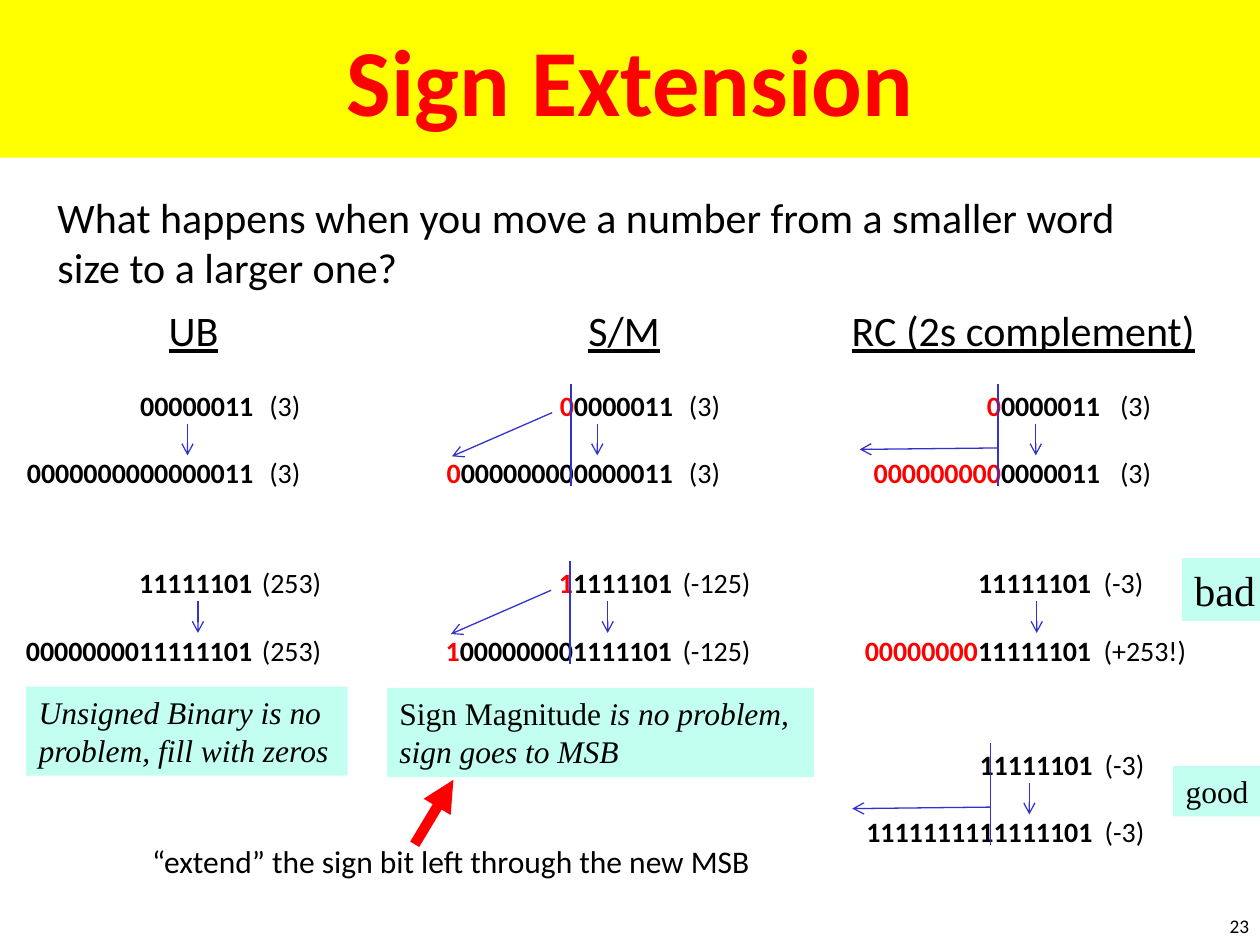
from dataclasses import dataclass

from lxml.etree import SubElement
from pptx import Presentation
from pptx.dml.color import RGBColor as RGB
from pptx.enum.shapes import MSO_CONNECTOR as CONNECTOR, MSO_SHAPE as SHAPE
from pptx.enum.text import MSO_ANCHOR as ANCHOR, MSO_AUTO_SIZE as AUTO_SIZE, PP_ALIGN as ALIGN
from pptx.oxml.ns import qn
from pptx.util import Cm, Pt


@dataclass(frozen=True)
class Theme:
    black = RGB(0, 0, 0)
    red = RGB(0xFF, 0, 0)
    yellow = RGB(0xFF, 0xFF, 0)
    mint = RGB(0xC2, 0xFF, 0xF0)
    blue = RGB(0x33, 0x33, 0xCC)
    title = {"name": "Calibri", "size": Pt(54), "bold": True}
    question = {"name": "Calibri", "size": Pt(24)}
    heading = {"name": "Calibri", "size": Pt(24), "underline": True}
    bits = {"name": "Calibri", "size": Pt(16), "bold": True}
    value = {"name": "Calibri", "size": Pt(16)}
    remark = {"name": "Calibri", "size": Pt(18)}
    number = {"name": "Calibri", "size": Pt(11)}
    note = {"name": "Times New Roman", "size": Pt(18)}
    note_italic = {**note, "italic": True}
    verdict = {"name": "Times New Roman", "size": Pt(24)}
    row_gap = Pt(19.5)
    thin, thick = Pt(0.75), Pt(6)


THEME = Theme()


@dataclass(frozen=True)
class Conversion:
    """One widening from 8 to 16 bits, placed relative to its column."""
    dx: float
    dy: float
    bits: tuple
    red: tuple
    values: tuple
    value_dx: float
    value_width: float
    down_dx: float
    spread: str = ""


# Start and end of the arrow that carries the sign bit to the left
SPREADS = {
    "move": ((2.47, 0.62), (0.45, 1.5)),
    "fill": ((2.85, 1.33), (0.06, 1.36)),
}


def write(paragraph, text, style, color=THEME.black):
    run = paragraph.add_run()
    run.text = text
    for attribute, setting in style.items():
        setattr(run.font, attribute, setting)
    run.font.color.rgb = color


def text_box(slide, box, wrap=False):
    frame = slide.shapes.add_textbox(*map(Cm, box)).text_frame
    frame.word_wrap = wrap
    return frame


def label(slide, box, text, style, wrap=False):
    write(text_box(slide, box, wrap).paragraphs[0], text, style)


def line(slide, start, end, color=THEME.blue, width=THEME.thin, head=None):
    connector = slide.shapes.add_connector(CONNECTOR.STRAIGHT, *map(Cm, start + end))
    connector.line.color.rgb = color
    connector.line.width = width
    if head:
        SubElement(connector.line._get_or_add_ln(), qn("a:tailEnd"), type=head)
    SubElement(connector._element.spPr, qn("a:effectLst"))


def note(slide, box, parts, wrap=True):
    """Mint box with a list of (text, style) parts."""
    panel = slide.shapes.add_shape(SHAPE.RECTANGLE, *map(Cm, box))
    panel.shadow.inherit = False
    panel.fill.solid()
    panel.fill.fore_color.rgb = THEME.mint
    panel.line.fill.background()
    frame = panel.text_frame
    frame.word_wrap = wrap
    frame.vertical_anchor = ANCHOR.TOP
    paragraph = frame.paragraphs[0]
    paragraph.alignment = ALIGN.LEFT
    for text, style in parts:
        write(paragraph, text, style)


def two_rows(frame):
    rows = [frame.paragraphs[0], frame.add_paragraph()]
    rows[1].space_before = THEME.row_gap
    return rows


def conversion(slide, left, top, item):
    def at(point):
        return left + point[0], top + point[1]

    bit_rows = two_rows(text_box(slide, (left, top, 5.16, 2.31)))
    for row, bits, red in zip(bit_rows, item.bits, item.red):
        row.alignment = ALIGN.RIGHT
        if red:
            write(row, bits[:red], THEME.bits, THEME.red)
        if bits[red:]:
            write(row, bits[red:], THEME.bits)

    value_box = (left + item.value_dx, top, item.value_width, 2.31)
    for row, value in zip(two_rows(text_box(slide, value_box)), item.values):
        write(row, value, THEME.value)

    line(slide, at((item.down_dx, 0.84)), at((item.down_dx, 1.48)), head="arrow")
    if item.spread:
        line(slide, at((2.85, 2.1)), at((2.85, 0.04)))
        start, end = SPREADS[item.spread]
        line(slide, at(start), at(end), head="arrow")


def column(slide, left, top, heading, heading_dx, heading_width, conversions):
    label(slide, (left + heading_dx, top, heading_width, 1.28), heading, THEME.heading)
    for item in conversions:
        conversion(slide, left + item.dx, top + item.dy, item)


def title_band(slide, box):
    title = slide.shapes.title
    title.left, title.top, title.width, title.height = map(Cm, box)
    title.fill.solid()
    title.fill.fore_color.rgb = THEME.yellow
    frame = title.text_frame
    frame.auto_size = AUTO_SIZE.NONE
    frame.vertical_anchor = ANCHOR.MIDDLE
    frame.paragraphs[0].alignment = ALIGN.CENTER
    write(frame.paragraphs[0], "Sign Extension", THEME.title, THEME.red)


def extend_remark(slide, left, top):
    label(slide, (left, top, 12.65, 1.02),
          "“extend” the sign bit left through the new MSB", THEME.remark)
    line(slide, (left + 5.54, top + 0.18), (left + 6.32, top - 1.12),
         THEME.red, THEME.thick, "triangle")


FIRST, SECOND, THIRD = 1.68, 5.26, 8.92
THREE = ("00000011", "0000000000000011")
UNSIGNED = [
    Conversion(0.02, FIRST, THREE, (0, 0), ("(3)", "(3)"), 4.98, 1.19, 3.58),
    Conversion(0, SECOND, ("11111101", "0000000011111101"), (0, 0),
               ("(253)", "(253)"), 4.85, 1.75, 3.81),
]
SIGN_MAGNITUDE = [
    Conversion(0.02, FIRST, THREE, (1, 1), ("(3)", "(3)"), 4.98, 1.19, 3.38, "move"),
    Conversion(0, SECOND, ("11111101", "1000000001111101"), (1, 1),
               ("(-125)", "(-125)"), 4.87, 1.96, 3.61, "move"),
]
TWOS_COMPLEMENT = [
    Conversion(0.18, FIRST, THREE, (1, 9), ("(3)", "(3)"), 5.06, 1.19, 3.61, "fill"),
    Conversion(0, SECOND, ("11111101", "0000000011111101"), (0, 8),
               ("(-3)", "(+253!)"), 4.91, 2.26, 3.81),
    Conversion(0.03, THIRD, ("11111101", "1111111111111101"), (0, 0),
               ("(-3)", "(-3)"), 4.9, 1.37, 3.63, "fill"),
]


def main():
    deck = Presentation()
    deck.slide_width, deck.slide_height = Cm(25.4), Cm(19.05)
    slide = deck.slides.add_slide(deck.slide_layouts[5])

    title_band(slide, (0, 0, 25.4, 3.18))
    label(slide, (0.91, 3.73, 22.43, 2.24),
          "What happens when you move a number from a smaller word size to a larger one?",
          THEME.question, wrap=True)

    column(slide, 0.18, 6.02, "UB", 2.97, 1.52, UNSIGNED)
    column(slide, 8.64, 6.02, "S/M", 2.97, 1.98, SIGN_MAGNITUDE)
    column(slide, 17.09, 6.02, "RC (2s complement)", -0.17, 7.62, TWOS_COMPLEMENT)

    note(slide, (0.53, 13.84, 6.48, 1.8),
         [("Unsigned Binary is no problem, fill with zeros", THEME.note_italic)])
    note(slide, (7.8, 13.87, 8.61, 1.8),
         [("Sign Magnitude ", THEME.note),
          ("is no problem, sign goes to MSB", THEME.note_italic)])
    extend_remark(slide, 2.82, 16.84)
    label(slide, (24.54, 18.31, 0.91, 0.74), "23", THEME.number)
    note(slide, (23.83, 11.25, 1.75, 1.27), [("bad", THEME.verdict)], wrap=False)
    note(slide, (23.65, 15.44, 1.8, 1.02), [("good", THEME.note)], wrap=False)

    deck.save("out.pptx")


if __name__ == "__main__":
    main()
